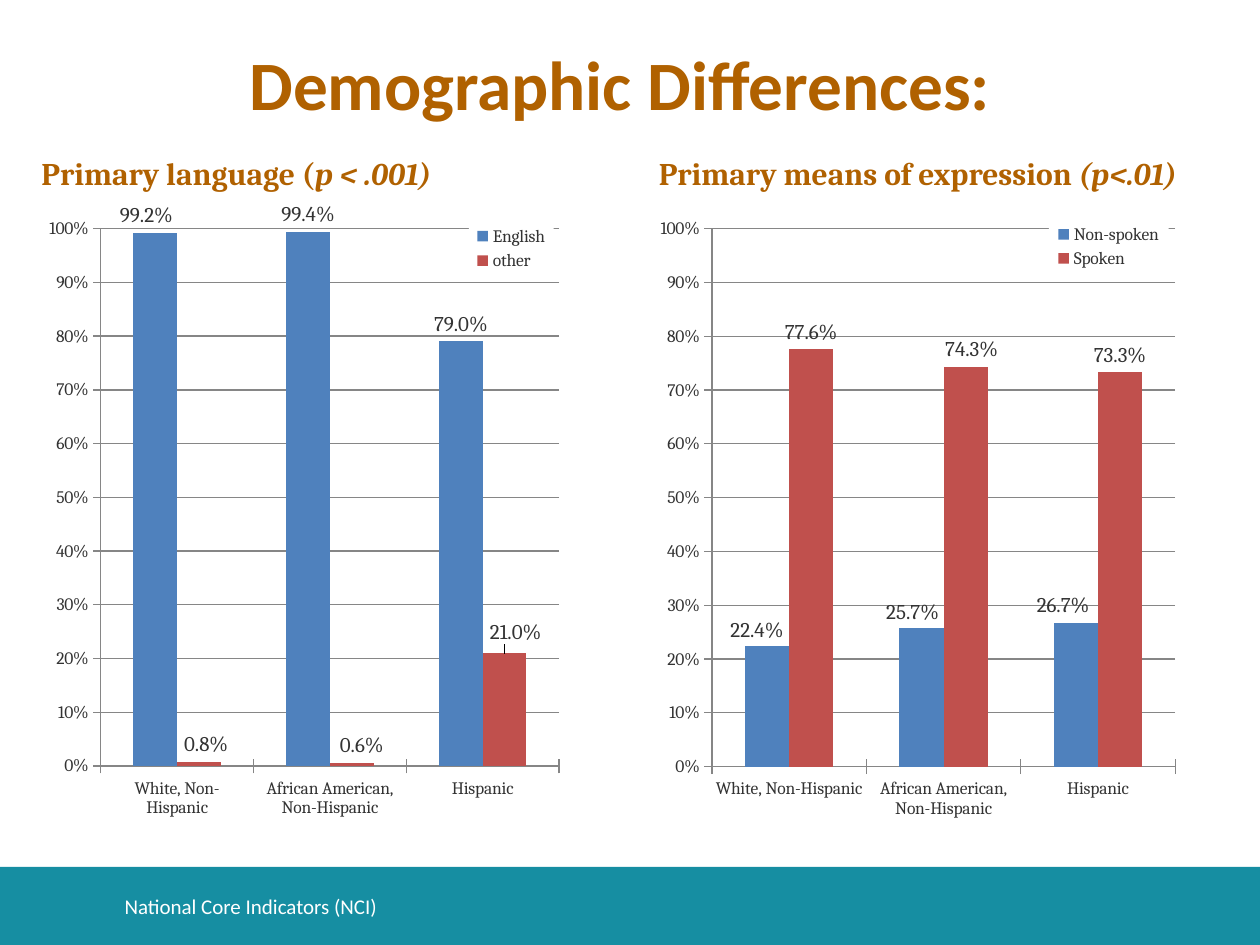
from lxml import etree
from pptx import Presentation
from pptx.chart.data import CategoryChartData
from pptx.dml.color import RGBColor
from pptx.enum.chart import XL_CHART_TYPE as ChartType
from pptx.enum.chart import XL_LABEL_POSITION as LabelPosition
from pptx.enum.chart import XL_LEGEND_POSITION as LegendPosition
from pptx.enum.chart import XL_TICK_MARK as TickMark
from pptx.enum.shapes import MSO_SHAPE as Shape
from pptx.enum.text import MSO_ANCHOR as Anchor
from pptx.enum.text import PP_ALIGN as Align
from pptx.oxml import parse_xml
from pptx.oxml.ns import nsdecls, qn
from pptx.util import Inches, Pt

TEAL = RGBColor(0x16, 0x8E, 0xA2)
BROWN = RGBColor(0xB0, 0x61, 0x00)
WHITE = RGBColor(0xFF, 0xFF, 0xFF)
TEXT_GREY = RGBColor(0x33, 0x33, 0x33)
LINE_GREY = RGBColor(0x86, 0x86, 0x86)
SERIES_COLORS = (RGBColor(0x4F, 0x81, 0xBD), RGBColor(0xC0, 0x50, 0x4D))

GROUPS = ("White, Non-Hispanic", "African American, Non-Hispanic", "Hispanic")


def add_text(slide, box, runs, font_name, size, color, bold=False,
             anchor=Anchor.MIDDLE, align=Align.LEFT):
    """Add a one-paragraph text box; runs are (text, italic) pairs."""
    frame = slide.shapes.add_textbox(*map(Inches, box)).text_frame
    frame.word_wrap = True
    frame.vertical_anchor = anchor
    paragraph = frame.paragraphs[0]
    paragraph.alignment = align
    for text, italic in runs:
        run = paragraph.add_run()
        run.text = text
        font = run.font
        font.name, font.size = font_name, Pt(size)
        font.bold, font.italic = bold, italic
        font.color.rgb = color


def manual_layout(x, y, size=None, inner=False):
    """Return a c:layout element, in fractions of the chart."""
    layout = parse_xml(f"<c:layout {nsdecls('c')}><c:manualLayout/></c:layout>")
    parts = []
    if inner:
        parts.append(("layoutTarget", "inner"))
    if size:
        parts += [("xMode", "edge"), ("yMode", "edge")]
    parts += [("x", x), ("y", y)]
    if size:
        parts += [("w", size[0]), ("h", size[1])]
    for name, value in parts:
        etree.SubElement(layout[0], qn(f"c:{name}")).set("val", str(value))
    return layout


def replace_layout(parent, index, layout):
    for old in parent.findall(qn("c:layout")):
        parent.remove(old)
    parent.insert(index, layout)


def style_font(font, size):
    font.name, font.size = "Cambria", Pt(size)
    font.color.rgb = TEXT_GREY


def style_axes(chart):
    for axis in (chart.category_axis, chart.value_axis):
        axis.major_tick_mark = TickMark.CROSS
        axis.minor_tick_mark = TickMark.NONE
        axis.format.line.color.rgb = LINE_GREY
    value_axis = chart.value_axis
    value_axis.minimum_scale, value_axis.maximum_scale = 0, 1
    value_axis.major_unit = 0.1
    value_axis.has_major_gridlines = True
    value_axis.major_gridlines.format.line.color.rgb = LINE_GREY
    value_axis.tick_labels.number_format = "0%"
    value_axis.tick_labels.number_format_is_linked = False


def style_series(series, color, shifts):
    """Colour the bars and label them; shifts move single labels."""
    series.format.fill.solid()
    series.format.fill.fore_color.rgb = color
    series.invert_if_negative = False
    labels = series.data_labels
    labels.show_value = True
    labels.number_format, labels.number_format_is_linked = "0.0%", False
    labels.position = LabelPosition.OUTSIDE_END
    style_font(labels.font, 12)
    for index, shift in shifts.items():
        label = series.points[index].data_label
        style_font(label.font, 12)
        label.position = LabelPosition.OUTSIDE_END
        element = labels._element.find(f"{qn('c:dLbl')}[{index_of(labels, index)}]")
        element.insert(1, manual_layout(*shift))
        element.insert(2, parse_xml(
            f'<c:numFmt {nsdecls("c")} formatCode="0.0%" sourceLinked="0"/>'))


def index_of(labels, point):
    """Return the one-based place of a point's own label element."""
    points = [int(label.find(qn("c:idx")).get("val"))
              for label in labels._element.findall(qn("c:dLbl"))]
    return points.index(point) + 1


def style_legend(chart, box):
    chart.has_legend = True
    legend = chart.legend
    legend.position = LegendPosition.RIGHT
    legend.include_in_layout = True
    style_font(legend.font, 10)
    element = legend._element
    replace_layout(element, 1, manual_layout(*box[:2], size=box[2:]))
    element.find(qn("c:txPr")).addprevious(parse_xml(
        f'<c:spPr {nsdecls("c", "a")}><a:solidFill><a:srgbClr val="{WHITE}"/>'
        "</a:solidFill></c:spPr>"))


def add_bar_chart(slide, box, series_data, plot_size, legend_box):
    data = CategoryChartData(number_format="0.0%")
    data.categories = GROUPS
    for name, values, _ in series_data:
        data.add_series(name, values)
    chart = slide.shapes.add_chart(
        ChartType.COLUMN_CLUSTERED, *map(Inches, box), data).chart
    chart.has_title = False
    style_font(chart.font, 10)
    style_axes(chart)
    plot = chart.plots[0]
    plot.gap_width, plot.overlap = 150, 0
    plot.vary_by_categories = False
    for series, color, (_, _, shifts) in zip(plot.series, SERIES_COLORS, series_data):
        style_series(series, color, shifts)
    style_legend(chart, legend_box)
    plot_area = plot._element.getparent()
    replace_layout(plot_area, 0, manual_layout(0.129, 0.046, plot_size, inner=True))


def add_footer(slide, box):
    left, top, width, height = box
    bar = slide.shapes.add_shape(Shape.RECTANGLE, *map(Inches, box))
    bar.shadow.inherit = False
    bar.fill.solid()
    bar.fill.fore_color.rgb = TEAL
    bar.line.fill.background()
    add_text(slide, (left + 0.89, top + 0.11, 7.4, 0.4),
             [("National Core Indicators (NCI)", False)], "Calibri", 12, WHITE)


def add_heading(slide, box, plain, italic):
    add_text(slide, box, [(plain, False), (italic, True)], "Cambria", 18, BROWN,
             bold=True, anchor=Anchor.BOTTOM)


def main():
    presentation = Presentation()
    presentation.slide_width, presentation.slide_height = Inches(10), Inches(7.5)
    slide = presentation.slides.add_slide(presentation.slide_layouts[6])

    add_footer(slide, (0, 6.88, 10, 0.62))
    add_text(slide, (0.42, 0.3, 9, 0.71), [("Demographic Differences:", False)],
             "Calibri", 39.6, BROWN, bold=True, align=Align.CENTER)

    add_heading(slide, (0.23, 1.1, 4.42, 0.47), "Primary language (", "p < .001)")
    language = (
        ("English", (0.992, 0.994, 0.79), {0: (-0.016, 0)}),
        ("other", (0.008, 0.006, 0.21),
         {0: (0.013, 0), 1: (0.018, 0), 2: (0.02, -0.006)}),
    )
    add_bar_chart(slide, (0.23, 1.58, 4.42, 5.12), language, (0.823, 0.833),
                  (0.79, 0.035, 0.152, 0.083))

    add_heading(slide, (5.13, 1.1, 4.58, 0.47), "Primary means of expression ", "(p<.01)")
    expression = (
        ("Non-spoken", (0.224, 0.257, 0.267),
         {0: (-0.018, 0.003), 1: (-0.016, 0.002), 2: (-0.023, 0)}),
        ("Spoken", (0.776, 0.743, 0.733), {1: (0.011, 0)}),
    )
    add_bar_chart(slide, (5.08, 1.58, 4.42, 5.12), expression, (0.832, 0.834),
                  (0.734, 0.033, 0.215, 0.081))

    presentation.save("out.pptx")


if __name__ == "__main__":
    main()
